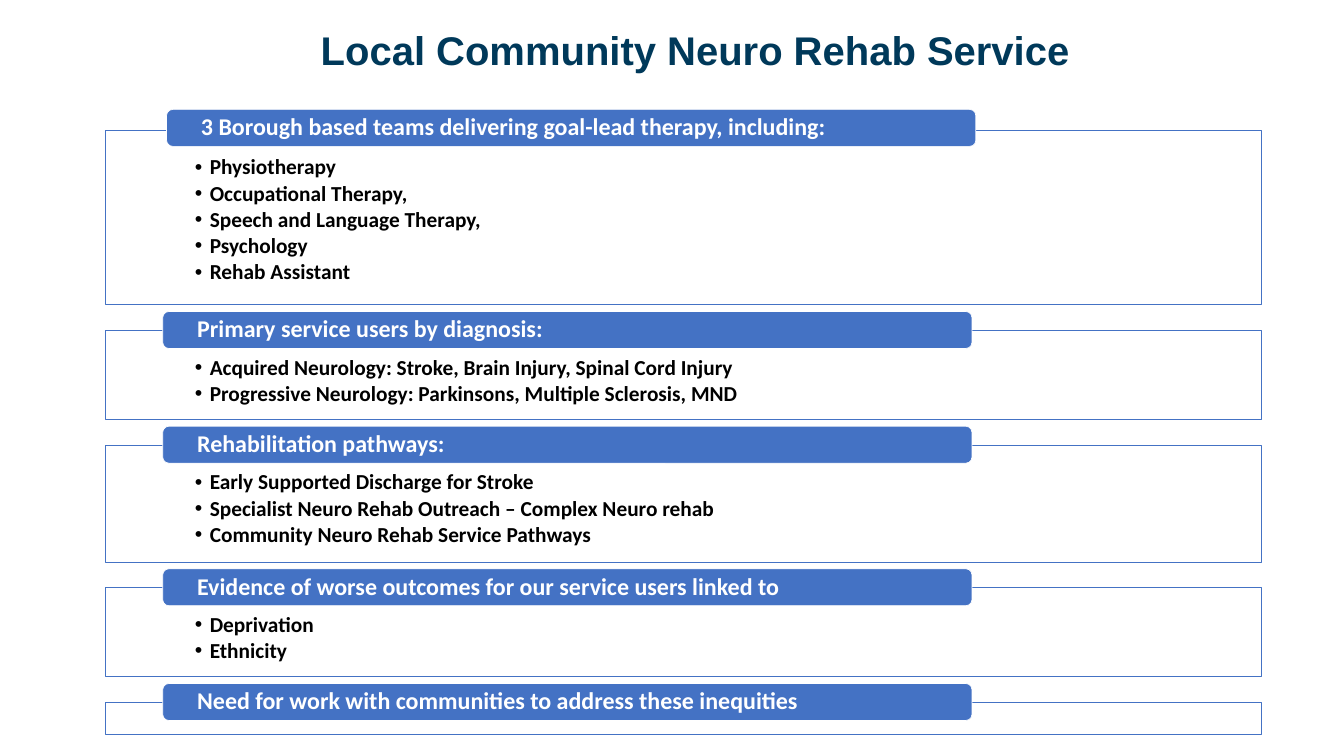
from dataclasses import dataclass

from lxml.etree import SubElement
from pptx import Presentation
from pptx.dml.color import RGBColor
from pptx.enum.shapes import MSO_SHAPE
from pptx.enum.text import MSO_ANCHOR, PP_ALIGN
from pptx.oxml.ns import qn
from pptx.util import Inches, Pt

COLORS = {"title": "00395A", "accent": "4472C4", "paper": "FFFFFF", "ink": "000000"}

# The page is a grid of one-inch columns and rows
COLUMNS, ROWS = 28, 15.75
FRAME_LEFT, FRAME_WIDTH, FIRST_TOP, FRAME_GAP = 2.19, 24.09, 2.71, 0.53
HEADING_WIDTH, HEADING_HEIGHT = 16.86, 0.77
BULLET_INDENT = 0.31


@dataclass
class Section:
    heading: str
    items: tuple[str, ...]
    height: float
    heading_left: float = 3.39
    heading_rise: float = 0.39


SECTIONS = [
    Section("3 Borough based teams delivering goal-lead therapy, including:",
            ("Physiotherapy", "Occupational Therapy,", "Speech and Language Therapy,",
             "Psychology", "Rehab Assistant"), 3.64, 3.47, 0.43),
    Section("Primary service users by diagnosis:",
            ("Acquired Neurology: Stroke, Brain Injury, Spinal Cord Injury",
             "Progressive Neurology: Parkinsons, Multiple Sclerosis, MND"), 1.86),
    Section("Rehabilitation pathways:",
            ("Early Supported Discharge for Stroke",
             "Specialist Neuro Rehab Outreach – Complex Neuro rehab",
             "Community Neuro Rehab Service Pathways"), 2.44),
    Section("Evidence of worse outcomes for our service users linked to",
            ("Deprivation", "Ethnicity"), 1.86),
    Section("Need for work with communities to address these inequities", (), 0.66),
]


def color(name: str) -> RGBColor:
    return RGBColor.from_string(COLORS[name])


def add_bullet(para) -> None:
    para.level = 1
    properties = para._p.get_or_add_pPr()
    properties.set("marL", str(Inches(BULLET_INDENT)))
    properties.set("indent", str(-Inches(BULLET_INDENT)))
    SubElement(properties, qn("a:buFont"), typeface="Arial")
    SubElement(properties, qn("a:buChar"), char="•")


def write(box, lines: tuple[str, ...], *, size: float, ink: str, font: str = "Calibri",
          align=PP_ALIGN.LEFT, anchor=MSO_ANCHOR.MIDDLE, after: float = 0,
          insets=(0.1, 0.05, 0.1, 0.05), bullets: bool = False) -> None:
    frame = box.text_frame
    frame.word_wrap = True
    frame.vertical_anchor = anchor
    (frame.margin_left, frame.margin_top,
     frame.margin_right, frame.margin_bottom) = map(Inches, insets)
    for index, line in enumerate(lines):
        para = frame.paragraphs[0] if index == 0 else frame.add_paragraph()
        para.alignment = align
        para.line_spacing = 0.9
        para.space_after = Pt(after)
        if bullets:
            add_bullet(para)
        span = para.add_run()
        span.text = line
        span.font.name, span.font.size, span.font.bold = font, Pt(size), True
        span.font.color.rgb = color(ink)


def add_panel(page, kind, left: float, top: float, width: float, height: float,
              fill: str, line: str):
    box = page.shapes.add_shape(kind, *map(Inches, (left, top, width, height)))
    box.shadow.inherit = False
    box.fill.solid()
    box.fill.fore_color.rgb = color(fill)
    box.line.color.rgb = color(line)
    box.line.width = Pt(1)
    return box


def add_section(page, section: Section, top: float) -> None:
    # Outlined frame with its bullet list
    frame = add_panel(page, MSO_SHAPE.RECTANGLE, FRAME_LEFT, top, FRAME_WIDTH,
                      section.height, "paper", "accent")
    fill = frame.fill.fore_color._xFill.find(qn("a:srgbClr"))
    SubElement(fill, qn("a:alpha"), val="90000")
    if section.items:
        write(frame, section.items, size=32, ink="ink", anchor=MSO_ANCHOR.TOP,
              after=4.8, insets=(1.87, 0.55, 1.87, 0.25), bullets=True)

    # Heading bar across the frame's top edge
    bar = add_panel(page, MSO_SHAPE.ROUNDED_RECTANGLE, section.heading_left,
                    top - section.heading_rise, HEADING_WIDTH, HEADING_HEIGHT,
                    "accent", "paper")
    write(bar, (section.heading,), size=36, ink="paper", insets=(0.68, 0, 0.68, 0))


def main() -> None:
    deck = Presentation()
    deck.slide_width, deck.slide_height = Inches(COLUMNS), Inches(ROWS)
    page = deck.slides.add_slide(deck.slide_layouts[6])

    # Title
    title = page.shapes.add_textbox(*map(Inches, (2.44, 0.42, 24.09, 1.34)))
    write(title, ("Local Community Neuro Rehab Service",), size=60, ink="title",
          font="Arial", align=PP_ALIGN.CENTER)

    # Sections stacked with an equal gap
    top = FIRST_TOP
    for section in SECTIONS:
        add_section(page, section, top)
        top += section.height + FRAME_GAP

    deck.save("out.pptx")


if __name__ == "__main__":
    main()
